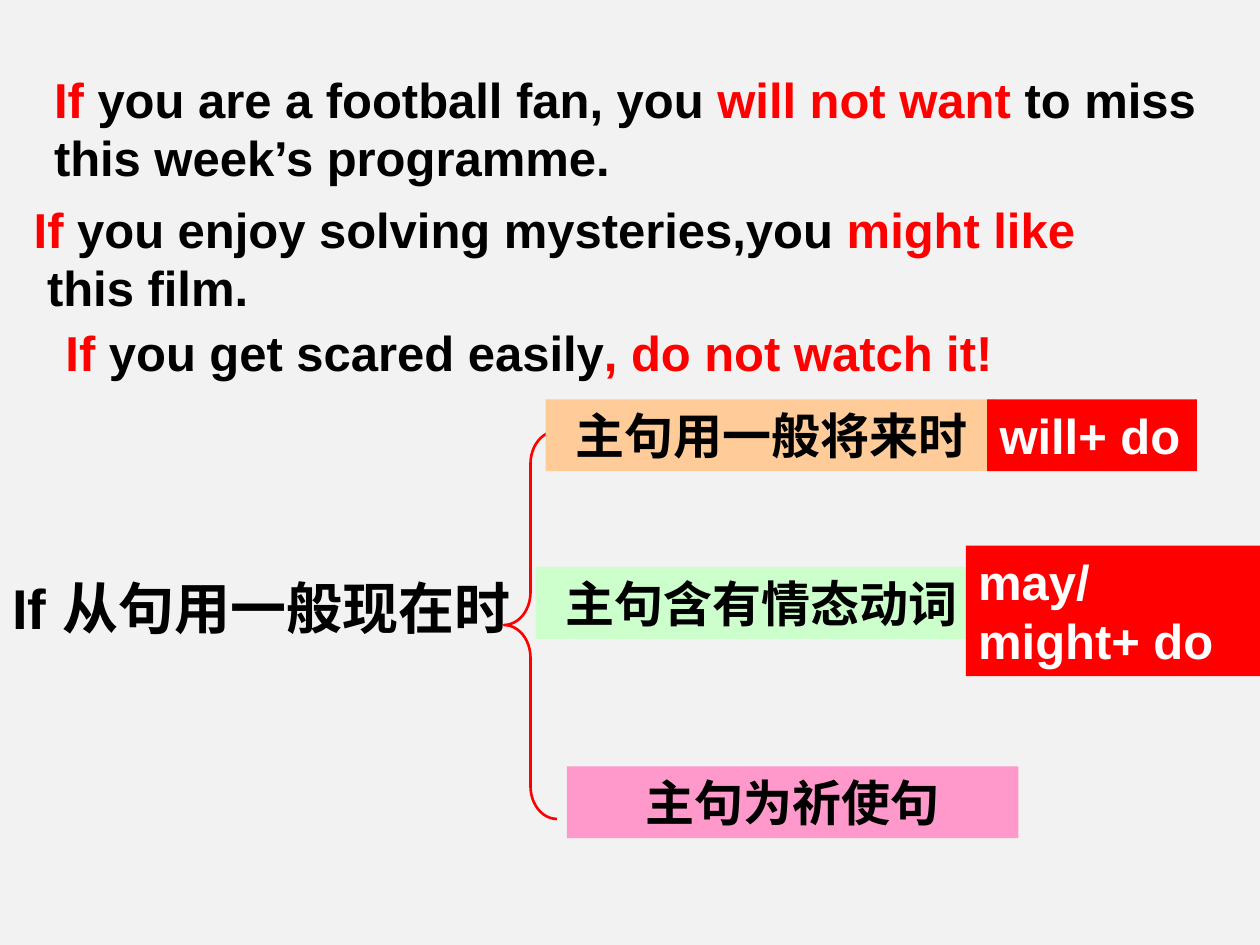
from pptx import Presentation
from pptx import util as u
from pptx.dml import color
from pptx.enum import shapes, text


class Theme:
    font = "Arial"
    body, head = 28, 32
    back, ink, key, white = "F2F2F2", "000000", "FF0000", "FFFFFF"
    peach, mint, pink = "FFCC99", "CCFFCC", "FF99CC"


def rgb(code):
    return color.RGBColor.from_string(code)


def style(run, tint, size=Theme.body):
    font = run.font
    font.name, font.size, font.bold = Theme.font, u.Pt(size), True
    font.color.rgb = rgb(tint)


deck = Presentation()
deck.slide_width, deck.slide_height = u.Cm(25.4), u.Cm(19.05)
slide = deck.slides.add_slide(deck.slide_layouts[6])
slide.background.fill.solid()
slide.background.fill.fore_color.rgb = rgb(Theme.back)

# Example sentences: place, wrap, then lines of (words, colour)
ink, key = Theme.ink, Theme.key
samples = [
    ((1.07, 6.38, 19.25, 1.45), False,
     [[("If ", key), ("you get scared easily", ink),
       (", do not watch it!", key)]]),
    ((0.43, 3.89, 27.38, 2.64), True,
     [[("If ", key), ("you enjoy solving mysteries,you ", ink),
       ("might like", key)],
      [("this film.", ink)]]),
    ((0.84, 1.27, 24.56, 2.62), True,
     [[("If ", key), ("you are a football fan, you ", ink),
       ("will not want ", key), ("to miss this week’s programme.", ink)]]),
]
for place, wrap, lines in samples:
    frame = slide.shapes.add_textbox(*map(u.Cm, place)).text_frame
    frame.word_wrap = wrap
    for i, line in enumerate(lines):
        para = frame.add_paragraph() if i else frame.paragraphs[0]
        if i:
            para._p.get_or_add_pPr().set("marL", str(u.Cm(0.27)))
        for words, tint in line:
            run = para.add_run()
            run.text = words
            style(run, tint)

# Condition clause
frame = slide.shapes.add_textbox(
    u.Cm(0), u.Cm(11.43), u.Cm(10.8), u.Cm(1.6)).text_frame
frame.word_wrap = True
frame.text = "If 从句用一般现在时"
style(frame.paragraphs[0].runs[0], ink, Theme.head)

# Brace
brace = slide.shapes.add_shape(
    shapes.MSO_SHAPE.LEFT_BRACE,
    u.Cm(10.16), u.Cm(8.69), u.Cm(1.07), u.Cm(7.82))
brace.adjustments[0], brace.adjustments[1] = 0.616, 0.5
brace.shadow.inherit = False
brace.fill.background()
brace.line.color.rgb = rgb(key)
brace.line.width = u.Pt(1.5)

# Main clause rules and their verb forms
mid, left = text.PP_ALIGN.CENTER, text.PP_ALIGN.LEFT
rules = [
    ("主句用一般将来时", (11, 8.05, 9.1, 1.45), Theme.peach, ink, mid),
    ("主句含有情态动词", (10.8, 11.43, 9.1, 1.45), Theme.mint, ink, mid),
    ("主句为祈使句", (11.43, 15.45, 9.1, 1.45), Theme.pink, ink, mid),
    ("will+ do", (19.9, 8.05, 4.23, 1.45), key, Theme.white, left),
    ("may/might+ do", (19.47, 11, 5.93, 2.63), key, Theme.white, left),
]
for words, place, fill, tint, align in rules:
    box = slide.shapes.add_shape(
        shapes.MSO_SHAPE.RECTANGLE, *map(u.Cm, place))
    box.shadow.inherit = False
    box.fill.solid()
    box.fill.fore_color.rgb = rgb(fill)
    box.line.fill.background()
    frame = box.text_frame
    frame.word_wrap = True
    frame.vertical_anchor = text.MSO_ANCHOR.TOP
    frame.text = words
    frame.paragraphs[0].alignment = align
    style(frame.paragraphs[0].runs[0], tint)

deck.save("out.pptx")
